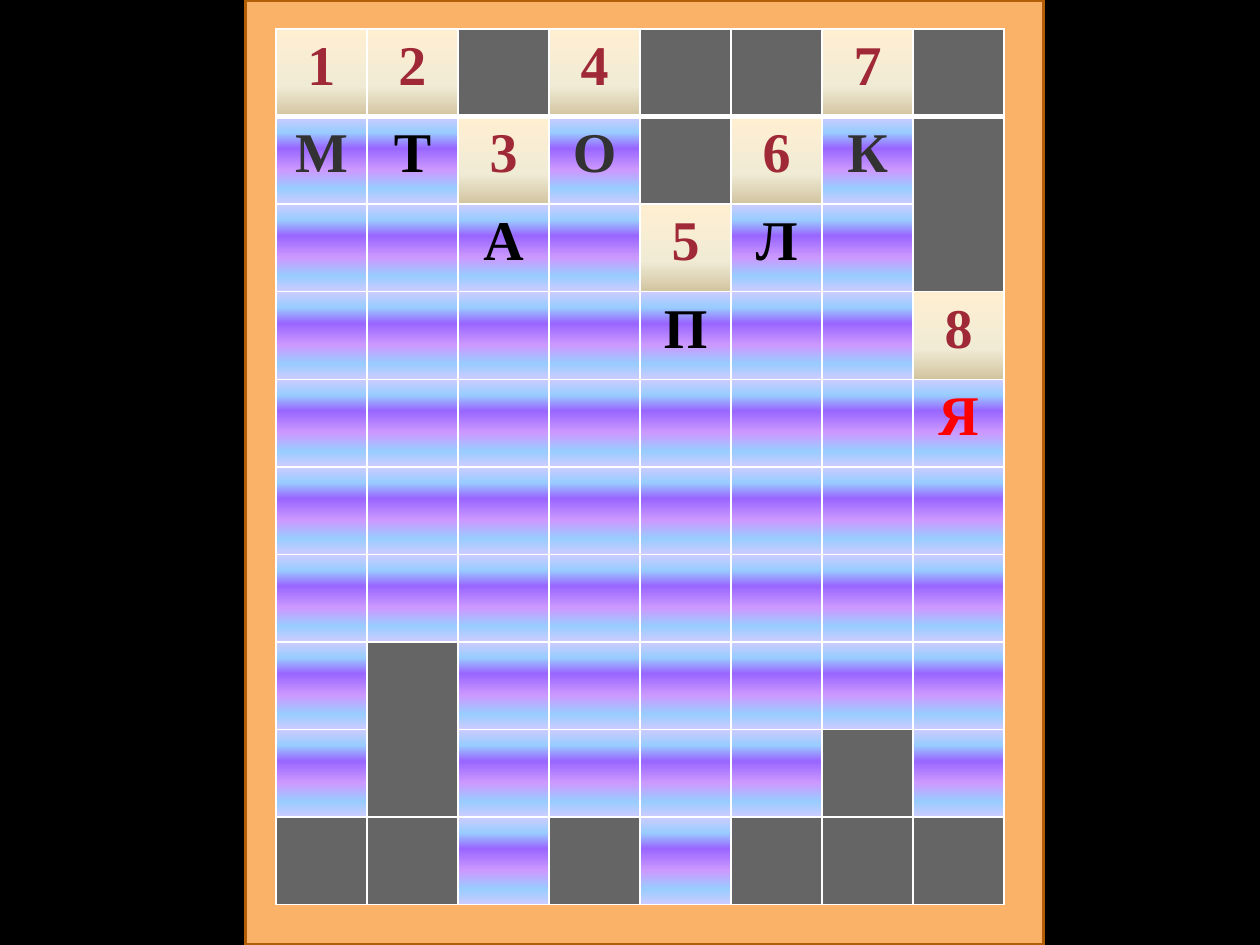
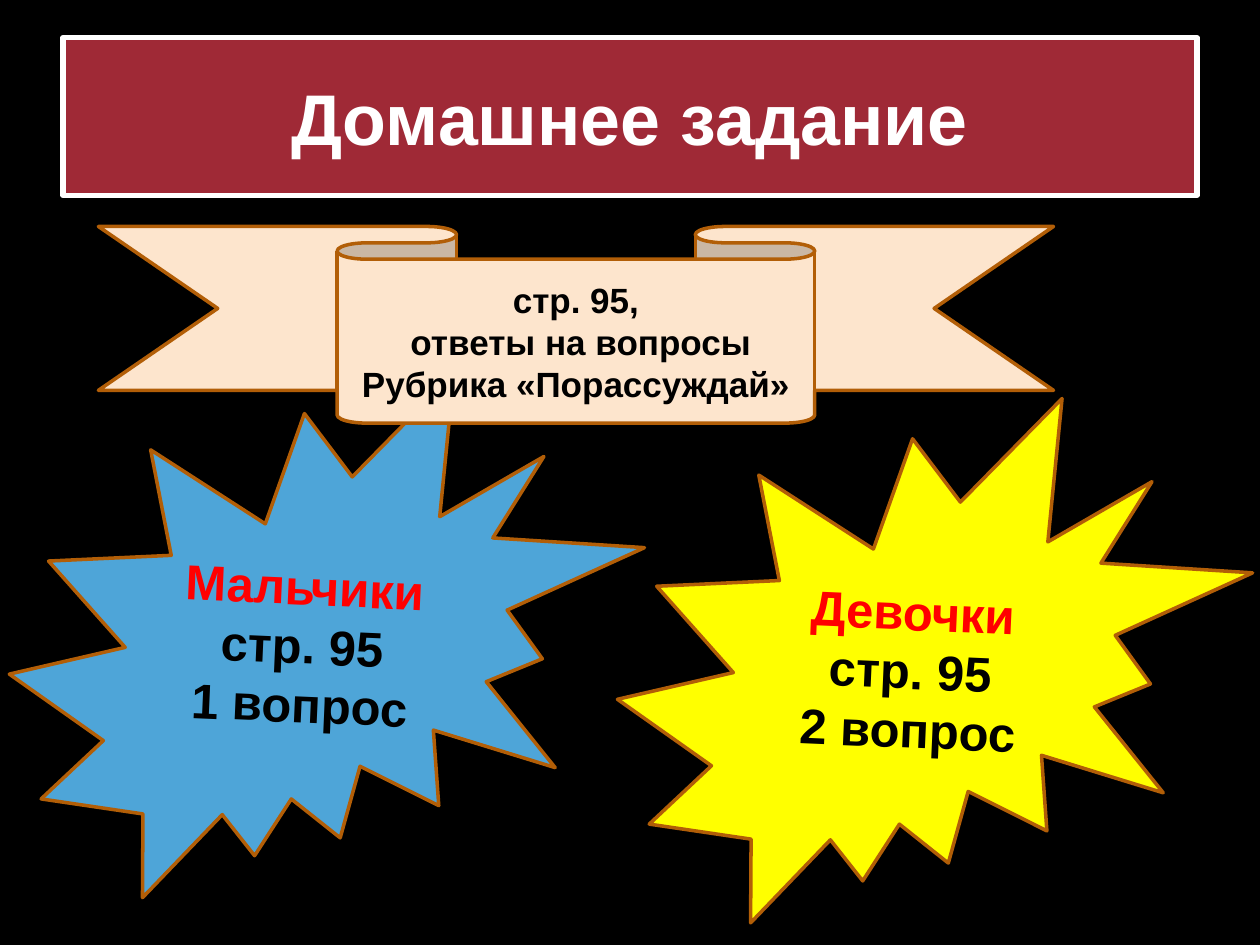
import collections
import dataclasses
import itertools

import lxml.etree
import pptx
import pptx.dml.color
import pptx.enum.shapes
import pptx.enum.text
import pptx.oxml.ns
import pptx.util

Pt = pptx.util.Pt
Shapes = pptx.enum.shapes.MSO_SHAPE
Box = collections.namedtuple("Box", "left top width height")


@dataclasses.dataclass(frozen=True)
class Theme:
    black: str = "000000"
    white: str = "FFFFFF"
    crimson: str = "9F2936"
    red: str = "FF0000"
    charcoal: str = "323232"
    blocked: str = "656565"
    orange: str = "F9B268"
    outline: str = "B25E07"
    peach: str = "FDE5CD"
    blue: str = "4EA5D8"
    yellow: str = "FFFF00"
    number_stops: tuple = ((0, "FFEFD1"), (65, "F0EBD5"), (100, "D1C39F"))
    letter_stops: tuple = ((0, "CCCCFF"), (18, "99CCFF"), (36, "9966FF"),
                           (61, "CC99FF"), (82, "99CCFF"), (100, "CCCCFF"))
    sans: str = "Arial"
    serif: str = "Times New Roman"
    title_size: int = 41
    grid_size: int = 32
    seal_size: int = 28
    ribbon_size: int = 20


THEME = Theme()

CROSSWORD = (
    "12#4##7#",
    "МТ3О#6К#",
    "..А.5Л.#",
    "....П..8",
    ".......Я",
    "........",
    "........",
    ".#......",
    ".#....#.",
    "##.#.###",
)
MERGES = (((1, 7), (2, 7)), ((7, 1), (8, 1)))
LETTER_COLORS = {"М": THEME.charcoal, "О": THEME.charcoal, "К": THEME.charcoal, "Я": THEME.red}


def rgb(color):
    return pptx.dml.color.RGBColor.from_string(color)


def set_values(target, values):
    for name, value in values.items():
        setattr(target, name, value)


def write_lines(frame, lines, font, size):
    for number, (text, color) in enumerate(lines):
        para = frame.add_paragraph() if number else frame.paragraphs[0]
        para.alignment = pptx.enum.text.PP_ALIGN.CENTER
        span = para.add_run()
        span.text = text
        set_values(span.font, {"name": font, "size": Pt(size), "bold": True})
        span.font.color.rgb = rgb(color)


def add_panel(page, kind, box, fill, line, line_width=2):
    panel = page.shapes.add_shape(kind, *map(Pt, box))
    panel.shadow.inherit = False
    panel.fill.solid()
    panel.fill.fore_color.rgb = rgb(fill)
    panel.line.color.rgb = rgb(line)
    panel.line.width = Pt(line_width)
    set_values(panel.text_frame, {"word_wrap": True,
                                  "vertical_anchor": pptx.enum.text.MSO_ANCHOR.MIDDLE})
    return panel


def add_node(parent, tag, **attributes):
    return lxml.etree.SubElement(parent, pptx.oxml.ns.qn(tag), attributes)


def add_borders(cell, widths):
    properties = cell._tc.get_or_add_tcPr()
    for side, width in widths.items():
        line = add_node(properties, f"a:ln{side}", w=str(Pt(width)))
        add_node(add_node(line, "a:solidFill"), "a:srgbClr", val=THEME.white)


def add_gradient(cell, stops):
    gradient = add_node(cell._tc.get_or_add_tcPr(), "a:gradFill", rotWithShape="1")
    stop_list = add_node(gradient, "a:gsLst")
    for position, color in stops:
        stop = add_node(stop_list, "a:gs", pos=str(position * 1000))
        add_node(stop, "a:srgbClr", val=color)
    add_node(gradient, "a:lin", ang="5400000", scaled="0")


def fill_cell(cell, mark):
    if mark == "#":
        cell.fill.solid()
        cell.fill.fore_color.rgb = rgb(THEME.blocked)
        return
    add_gradient(cell, THEME.number_stops if mark.isdigit() else THEME.letter_stops)
    if mark != ".":
        color = THEME.crimson if mark.isdigit() else LETTER_COLORS.get(mark, THEME.black)
        write_lines(cell.text_frame, [(mark, color)], THEME.serif, THEME.grid_size)


def add_crossword(page, box):
    rows, columns = len(CROSSWORD), len(CROSSWORD[0])
    grid = page.shapes.add_table(rows, columns, *map(Pt, box)).table
    set_values(grid, {"first_row": False, "horz_banding": False})
    for column in grid.columns:
        column.width = Pt(box.width / columns)
    for row in grid.rows:
        row.height = Pt(box.height / rows)
    for row, column in itertools.product(range(rows), range(columns)):
        cell = grid.cell(row, column)
        add_borders(cell, {"L": 1, "R": 1, "T": 3 if row == 1 else 1, "B": 3 if row == 0 else 1})
        fill_cell(cell, CROSSWORD[row][column])
    for first, last in MERGES:
        grid.cell(*first).merge(grid.cell(*last))


def add_crossword_board(page, box):
    add_panel(page, Shapes.FLOWCHART_PROCESS, box, THEME.orange, THEME.outline)
    add_crossword(page, Box(box.left + 17.3, box.top + 16.6, 416.16, 500.4))


def add_title(page, box, text):
    title = add_panel(page, Shapes.RECTANGLE, box, THEME.crimson, THEME.white, 3)
    write_lines(title.text_frame, [(text, THEME.white)], THEME.sans, THEME.title_size)


def add_seal(page, box, fill, group, question):
    seal = add_panel(page, Shapes.EXPLOSION2, box, fill, THEME.outline)
    seal.rotation = 2.6
    lines = [(group, THEME.red), (" стр. 95 ", THEME.black), (question, THEME.black)]
    write_lines(seal.text_frame, lines, THEME.sans, THEME.seal_size)


def add_ribbon(page, box, texts):
    ribbon = add_panel(page, Shapes.DOWN_RIBBON, box, THEME.peach, THEME.outline)
    lines = [(text, THEME.black) for text in texts]
    write_lines(ribbon.text_frame, lines, THEME.sans, THEME.ribbon_size)


def add_page(deck):
    page = deck.slides.add_slide(deck.slide_layouts[6])
    page.background.fill.solid()
    page.background.fill.fore_color.rgb = rgb(THEME.black)
    return page


def build_crossword_page(deck):
    add_crossword_board(add_page(deck), Box(140.4, 0, 456, 540))


def build_homework_page(deck):
    page = add_page(deck)
    add_title(page, Box(36, 21.6, 648, 90), "Домашнее задание")
    add_seal(page, Box(6.5, 210.2, 359.3, 307.4), THEME.blue, "Мальчики", "1 вопрос")
    add_seal(page, Box(354, 224.6, 359.3, 307.4), THEME.yellow, "Девочки", "2 вопрос")
    add_ribbon(page, Box(56.2, 129.4, 545.8, 112.4),
               ["стр. 95,", " ответы на вопросы", "Рубрика «Порассуждай»"])


def main():
    deck = pptx.Presentation()
    set_values(deck, {"slide_width": Pt(720), "slide_height": Pt(540)})
    build_crossword_page(deck)
    build_homework_page(deck)
    deck.save("out.pptx")


if __name__ == "__main__":
    main()
